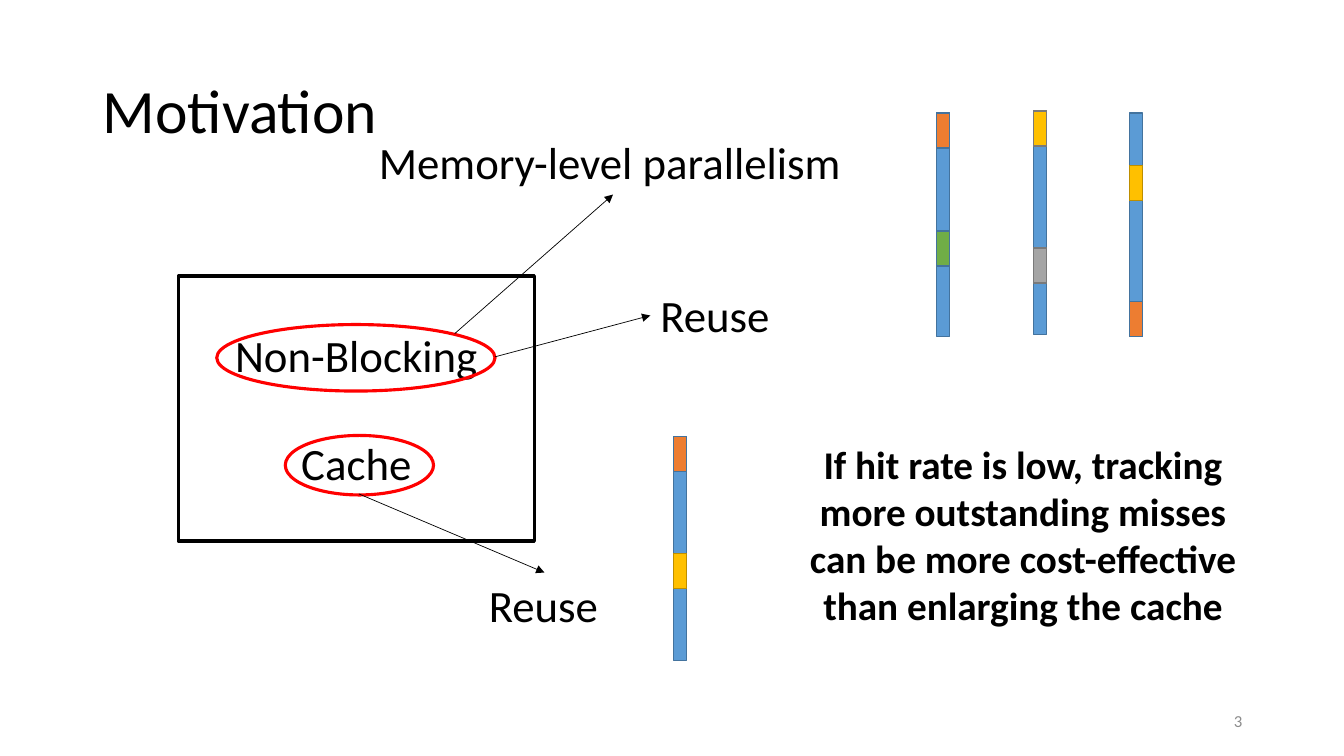
from lxml import etree
from pptx import Presentation
from pptx.dml.color import RGBColor
from pptx.enum.shapes import MSO_CONNECTOR, MSO_SHAPE
from pptx.enum.text import MSO_ANCHOR, PP_ALIGN
from pptx.oxml.ns import qn
from pptx.util import Inches, Pt

RECT, OVAL = MSO_SHAPE.RECTANGLE, MSO_SHAPE.OVAL
STRAIGHT = MSO_CONNECTOR.STRAIGHT
TOP, MIDDLE = MSO_ANCHOR.TOP, MSO_ANCHOR.MIDDLE
LEFT, CENTER, RIGHT = PP_ALIGN.LEFT, PP_ALIGN.CENTER, PP_ALIGN.RIGHT

FONT = "Calibri"
COLORS = {
    "black": "000000", "white": "FFFFFF", "red": "FF0000", "muted": "8C8C8C",
    "blue": "5B9BD5", "navy": "43739E", "orange": "ED7D31", "yellow": "FFC000",
    "ochre": "BD8E00", "gray": "A5A5A5", "slate": "7A7A7A", "green": "70AD47",
}
BAR_WIDTH, BAR_HEIGHT, WORD_HEIGHT = 0.13, 2.22, 0.35

LABELS = [
    ("Memory-level parallelism", (3.66, 1.29, 4.84, 0.64)),
    ("Reuse", (4.75, 5.68, 1.29, 0.64)),
    ("Reuse", (6.45, 2.81, 1.29, 0.64)),
]
ARROWS = [
    ((3.56, 4.9), (5.4, 5.68)),
    ((4.51, 3.31), (6.08, 1.93)),
    ((4.91, 3.54), (6.45, 3.13)),
]
CACHE_LINES = [
    (6.68, 4.33, [(0, "orange", "navy"), (1.16, "yellow", "ochre")]),
    (9.29, 1.12, [(0, "orange", "navy"), (1.17, "green", "navy")]),
    (10.25, 1.1, [(0, "yellow", "slate"), (1.36, "gray", "slate")]),
    (11.2, 1.12, [(0.52, "yellow", "ochre"), (1.87, "orange", "navy")]),
]
CONCLUSION = ("If hit rate is low, tracking more outstanding misses can be "
              "more cost-effective than enlarging the cache")


def rgb(name):
    """Return the named colour."""
    return RGBColor.from_string(COLORS[name])


def write(sp, lines, size, color="black", align=LEFT, anchor=TOP, bold=False, wrap=True, gap=0):
    """Fill a shape with paragraphs of one style, set apart by gap points."""
    tf = sp.text_frame
    tf.word_wrap = wrap
    tf.vertical_anchor = anchor
    for i, line in enumerate(lines):
        p = tf.add_paragraph() if i else tf.paragraphs[0]
        p.text = line
        p.alignment = align
        p.space_before = Pt(gap if i else 0)
        p.font.name = FONT
        p.font.size = Pt(size)
        p.font.bold = bold
        p.font.color.rgb = rgb(color)
    return tf


def add_text(s, text, box, size, **style):
    """Add a text box with one paragraph."""
    sp = s.shapes.add_textbox(*map(Inches, box))
    return write(sp, [text], size, **style)


def add_block(s, kind, box, fill=None, line=None, width=1):
    """Add a preset shape with an optional fill and outline."""
    sp = s.shapes.add_shape(kind, *map(Inches, box))
    sp.shadow.inherit = False
    if fill:
        sp.fill.solid()
        sp.fill.fore_color.rgb = rgb(fill)
    else:
        sp.fill.background()
    if line:
        sp.line.color.rgb = rgb(line)
        sp.line.width = Pt(width)
    else:
        sp.line.fill.background()
    return sp


def add_arrow(s, start, end):
    """Add a thin black arrow."""
    arrow = s.shapes.add_connector(STRAIGHT, *map(Inches, start + end))
    arrow.line.color.rgb = rgb("black")
    arrow.line.width = Pt(0.5)
    etree.SubElement(arrow.line._get_or_add_ln(), qn("a:tailEnd"), type="triangle")
    etree.SubElement(arrow._element.spPr, qn("a:effectLst"))


def add_cache_line(s, left, top, words):
    """Add a vertical cache line with its accessed words."""
    add_block(s, RECT, (left, top, BAR_WIDTH, BAR_HEIGHT), "blue", "navy")
    for offset, fill, line in words:
        add_block(s, RECT, (left, top + offset, BAR_WIDTH, WORD_HEIGHT), fill, line)


def main():
    """Build the motivation slide."""
    prs = Presentation()
    prs.slide_width, prs.slide_height = Inches(13.33), Inches(7.5)
    s = prs.slides.add_slide(prs.slide_layouts[6])

    title = add_text(s, "Motivation", (0.92, 0.4, 11.5, 1.45), 44, anchor=MIDDLE)
    title.paragraphs[0].line_spacing = 0.9
    add_text(s, "3", (9.42, 6.95, 3, 0.4), 12, color="muted", align=RIGHT, anchor=MIDDLE)

    cache = add_block(s, RECT, (1.77, 2.74, 3.53, 2.63), "white", "black", 2.5)
    write(cache, ["Non-Blocking", "Cache"], 32, align=CENTER, anchor=MIDDLE, gap=39)
    for box in [(2.83, 4.32, 1.47, 0.59), (2.15, 3.22, 2.76, 0.66)]:
        add_block(s, OVAL, box, line="red", width=2.25)

    for start, end in ARROWS:
        add_arrow(s, start, end)
    for text, box in LABELS:
        add_text(s, text, box, 32, wrap=False)

    conclusion = add_block(s, RECT, (7.87, 4.32, 4.55, 1.99), "white")
    write(conclusion, [CONCLUSION], 28, align=CENTER, bold=True)
    for left, top, words in CACHE_LINES:
        add_cache_line(s, left, top, words)

    prs.save("out.pptx")


if __name__ == "__main__":
    main()
